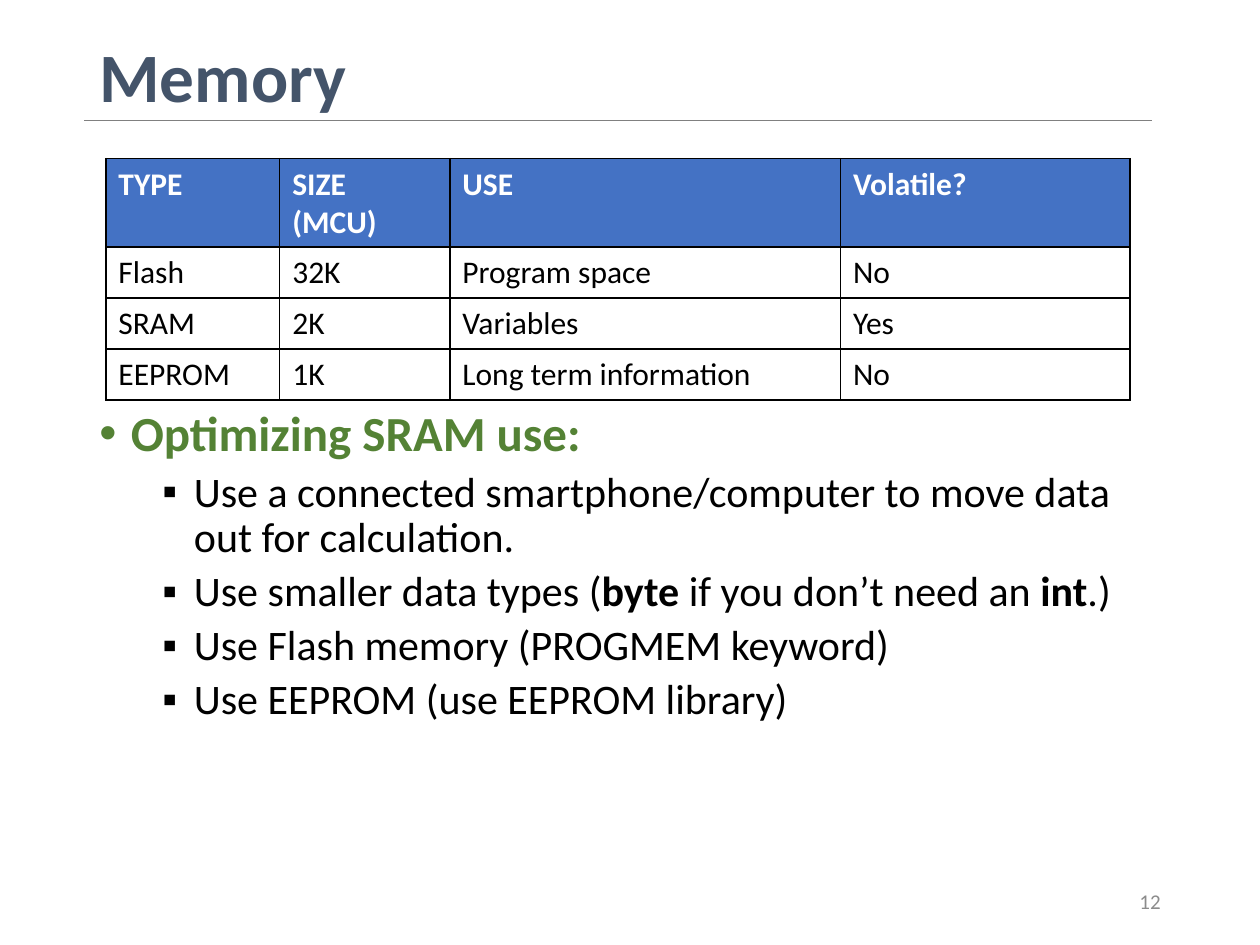
from dataclasses import dataclass

from lxml import etree
from pptx import Presentation
from pptx.dml.color import RGBColor
from pptx.enum.shapes import MSO_CONNECTOR
from pptx.enum.text import MSO_ANCHOR, PP_ALIGN
from pptx.oxml.ns import qn
from pptx.util import Inches, Pt

STRAIGHT = MSO_CONNECTOR.STRAIGHT
TOP, MIDDLE = MSO_ANCHOR.TOP, MSO_ANCHOR.MIDDLE
LEFT, RIGHT = PP_ALIGN.LEFT, PP_ALIGN.RIGHT


@dataclass(frozen=True)
class Theme:
    font: str = "Calibri"
    title: str = "44546A"
    rule: str = "808080"
    header_fill: str = "4472C4"
    white: str = "FFFFFF"
    black: str = "000000"
    heading: str = "548235"
    number: str = "8C8C8C"
    title_size: float = 39.6
    heading_size: float = 28
    point_size: float = 24
    table_size: float = 18
    number_size: float = 12


THEME = Theme()

MEMORY_ROWS = [
    ["TYPE", "SIZE (MCU)", "USE", "Volatile?"],
    ["Flash", "32K", "Program space", "No"],
    ["SRAM", "2K", "Variables", "Yes"],
    ["EEPROM", "1K", "Long term information", "No"],
]
COLUMN_WIDTHS = [1.38, 1.35, 3.1, 2.3]

# Each point is a list of (text, bold) runs.
SRAM_POINTS = [
    [("Use a connected smartphone/computer to move data out for calculation.", False)],
    [("Use smaller data types (", False), ("byte", True),
     (" if you don’t need an ", False), ("int", True), (".)", False)],
    [("Use Flash memory (PROGMEM keyword)", False)],
    [("Use EEPROM (use EEPROM library)", False)],
]


def add_run(paragraph, text, size, color, bold=False):
    run = paragraph.add_run()
    run.text = text
    run.font.name = THEME.font
    run.font.size = Pt(size)
    run.font.bold = bold
    run.font.color.rgb = RGBColor.from_string(color)


def add_text_frame(slide, box, anchor=TOP):
    frame = slide.shapes.add_textbox(*map(Inches, box)).text_frame
    frame.word_wrap = True
    frame.vertical_anchor = anchor
    return frame


def add_title(slide, box, text):
    heading = add_text_frame(slide, box, MIDDLE).paragraphs[0]
    heading.line_spacing = 0.9
    add_run(heading, text, THEME.title_size, THEME.title, bold=True)


def add_title_rule(slide, left, right, y):
    rule = slide.shapes.add_connector(
        STRAIGHT, Inches(left), Inches(y), Inches(right), Inches(y))
    rule.line.color.rgb = RGBColor.from_string(THEME.rule)
    rule.line.width = Pt(0.5)
    etree.SubElement(rule._element.spPr, qn("a:effectLst"))


def set_borders(cell, color, width):
    properties = cell._tc.get_or_add_tcPr()
    for position, side in enumerate(("a:lnL", "a:lnR", "a:lnT", "a:lnB")):
        border = etree.Element(qn(side), w=str(Pt(width)))
        fill = etree.SubElement(border, qn("a:solidFill"))
        etree.SubElement(fill, qn("a:srgbClr"), val=color)
        properties.insert(position, border)


def add_memory_table(slide, box):
    table = slide.shapes.add_table(
        len(MEMORY_ROWS), len(COLUMN_WIDTHS), *map(Inches, box)).table
    for column, width in zip(table.columns, COLUMN_WIDTHS):
        column.width = Inches(width)
    for row_index, values in enumerate(MEMORY_ROWS):
        is_header = row_index == 0
        fill = THEME.header_fill if is_header else THEME.white
        color = THEME.white if is_header else THEME.black
        for column_index, value in enumerate(values):
            cell = table.cell(row_index, column_index)
            cell.fill.solid()
            cell.fill.fore_color.rgb = RGBColor.from_string(fill)
            set_borders(cell, THEME.black, 1)
            add_run(cell.text_frame.paragraphs[0], value,
                    THEME.table_size, color, bold=is_header)


def format_bullet(paragraph, level, symbol, space_before):
    paragraph.level = level
    paragraph.alignment = LEFT
    paragraph.line_spacing = 0.9
    paragraph.space_before = Pt(space_before)
    properties = paragraph._p.get_or_add_pPr()
    properties.set("marL", str(Inches(0.25 + 0.5 * level)))
    properties.set("indent", str(Inches(-0.25)))
    etree.SubElement(properties, qn("a:buFont"), typeface="Arial")
    etree.SubElement(properties, qn("a:buChar"), char=symbol)


def add_sram_advice(slide, box):
    frame = add_text_frame(slide, box)
    heading = frame.paragraphs[0]
    format_bullet(heading, 0, "•", 10)
    add_run(heading, "Optimizing SRAM use:", THEME.heading_size,
            THEME.heading, bold=True)
    for runs in SRAM_POINTS:
        point = frame.add_paragraph()
        format_bullet(point, 1, "▪", 5)
        for text, bold in runs:
            add_run(point, text, THEME.point_size, THEME.black, bold)


def add_slide_number(slide, box, number):
    line = add_text_frame(slide, box, MIDDLE).paragraphs[0]
    line.alignment = RIGHT
    add_run(line, number, THEME.number_size, THEME.number)


def main():
    deck = Presentation()
    deck.slide_width, deck.slide_height = Inches(10), Inches(7.5)
    slide = deck.slides.add_slide(deck.slide_layouts[6])
    add_title(slide, (0.69, 0.4, 8.62, 0.47), "Memory")
    add_title_rule(slide, 0.67, 9.14, 0.96)
    add_memory_table(slide, (0.84, 1.26, 8.13, 1.62))
    add_sram_advice(slide, (0.69, 3.2, 8.62, 3.56))
    add_slide_number(slide, (7.06, 6.95, 2.25, 0.4), "12")
    deck.save("out.pptx")


if __name__ == "__main__":
    main()
